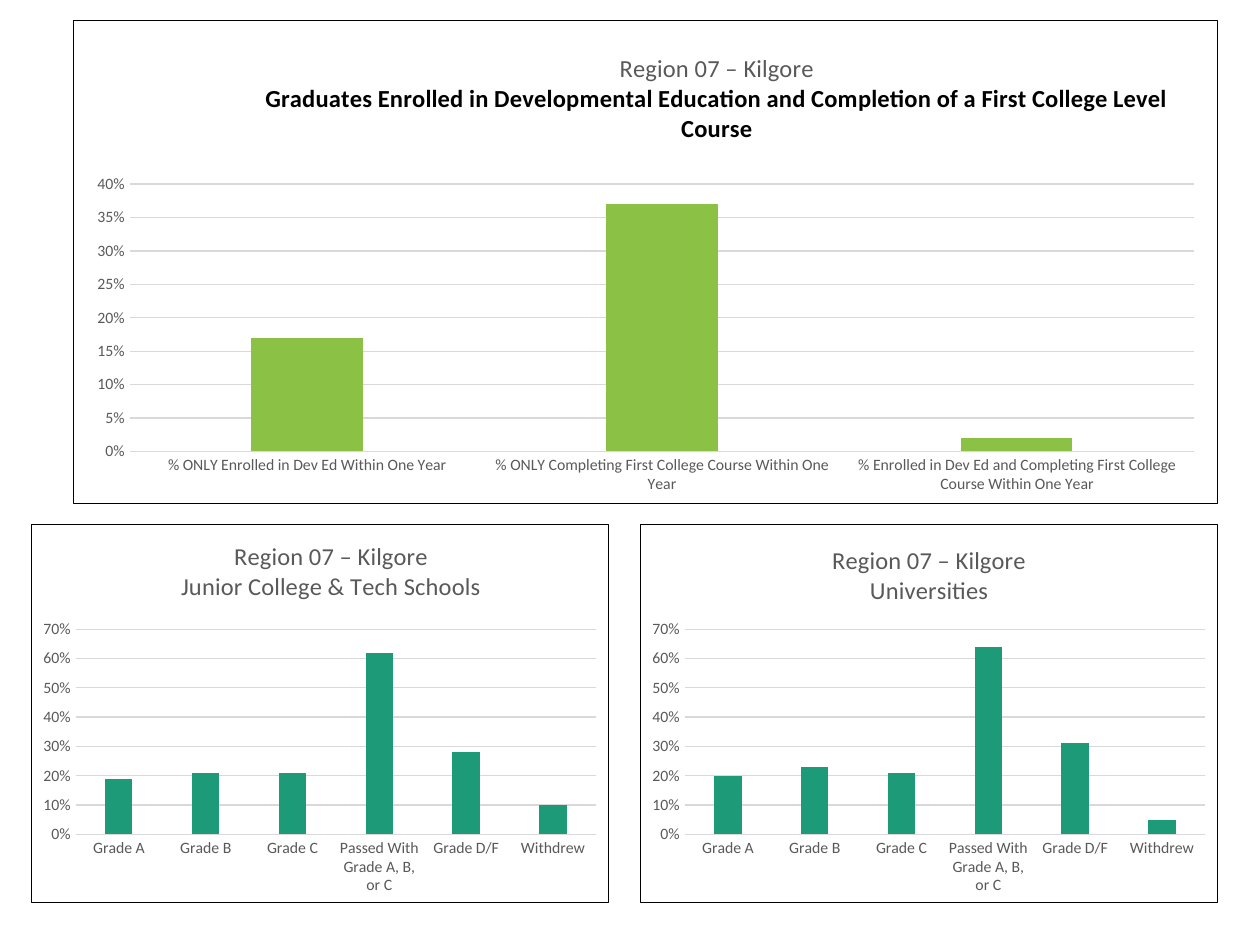
from lxml.etree import SubElement
from pptx import Presentation
from pptx.chart.data import CategoryChartData
from pptx.dml.color import RGBColor
from pptx.enum.chart import XL_CHART_TYPE, XL_TICK_MARK
from pptx.oxml import parse_xml
from pptx.oxml.ns import nsdecls, qn
from pptx.util import Pt

EMU_PER_PX = 914400 / 126
BLACK = RGBColor(0x00, 0x00, 0x00)
GRAY = RGBColor(0x59, 0x59, 0x59)
LIGHT_GRAY = RGBColor(0xD9, 0xD9, 0xD9)
LIME = RGBColor(0x8B, 0xC1, 0x45)
TEAL = RGBColor(0x1D, 0x9A, 0x78)
FONT = "Calibri"

REGION = "Region 07 – Kilgore"
OUTCOMES = [
    "% ONLY Enrolled in Dev Ed Within One Year",
    "% ONLY Completing First College Course Within One Year",
    "% Enrolled in Dev Ed and Completing First College Course Within One Year",
]
GRADES = ["Grade A", "Grade B", "Grade C", "Passed With Grade A, B, or C",
          "Grade D/F", "Withdrew"]


def px(n):
    return round(n * EMU_PER_PX)


def set_font(font, size, color, bold=False):
    font.name = FONT
    font.size = Pt(size)
    font.bold = bold
    font.color.rgb = color


def add_text(p, text, size=14, color=GRAY, bold=False):
    r = p.add_run()
    r.text = text
    set_font(r.font, size, color, bold)


def set_layout(parent, index, box, x, y, w=None, h=None):
    """Place a chart part, given in px from the corner of the chart's box."""
    old = parent.find(qn("c:layout"))
    if old is not None:
        parent.remove(old)
    layout = parse_xml(f"<c:layout {nsdecls('c')}/>")
    parent.insert(index, layout)
    manual = SubElement(layout, qn("c:manualLayout"))
    if w:
        SubElement(manual, qn("c:layoutTarget")).set("val", "inner")
    for key in ("x", "y"):
        SubElement(manual, qn(f"c:{key}Mode")).set("val", "edge")
    width, height = box[2:]
    for key, part, whole in (("x", x, width), ("y", y, height),
                             ("w", w, width), ("h", h, height)):
        if part is not None:
            SubElement(manual, qn(f"c:{key}")).set("val", str(part / whole))


def add_border(chart):
    sp_pr = parse_xml(
        f'<c:spPr {nsdecls("c", "a")}><a:solidFill><a:srgbClr val="FFFFFF"/></a:solidFill>'
        f'<a:ln w="{Pt(0.75)}"><a:solidFill><a:srgbClr val="{BLACK}"/></a:solidFill></a:ln>'
        '</c:spPr>')
    chart._chartSpace.find(qn("c:chart")).addnext(sp_pr)


def add_title(chart, box, subtitle, x, y, **fmt):
    chart.has_title = True
    title = chart.chart_title
    tf = title.text_frame
    add_text(tf.paragraphs[0], REGION)
    add_text(tf.add_paragraph(), subtitle, **fmt)
    title.include_in_layout = False
    set_layout(title._element, 1, box, x, y)


def style_axes(chart, top, step):
    cat, val = chart.category_axis, chart.value_axis
    for axis in (cat, val):
        axis.major_tick_mark = axis.minor_tick_mark = XL_TICK_MARK.NONE
        set_font(axis.tick_labels.font, 9, GRAY)
    val.minimum_scale, val.maximum_scale, val.major_unit = 0, top, step
    val.tick_labels.number_format = "0%"
    val.tick_labels.number_format_is_linked = False
    val.format.line.fill.background()
    val.has_major_gridlines = True
    for line in (cat.format.line, val.major_gridlines.format.line):
        line.color.rgb = LIGHT_GRAY
        line.width = Pt(0.75)


def add_column_chart(s, box, plot_box, cats, vals, color, top, step):
    data = CategoryChartData(number_format="0%")
    data.categories = cats
    data.add_series("Series 1", vals)
    chart = s.shapes.add_chart(
        XL_CHART_TYPE.COLUMN_CLUSTERED, *map(px, box), data).chart
    set_font(chart.font, 10, BLACK)
    chart.has_legend = False
    add_border(chart)
    style_axes(chart, top, step)

    # Columns
    plot = chart.plots[0]
    plot.gap_width, plot.overlap = 219, -27
    plot.vary_by_categories = False
    fill = plot.series[0].format.fill
    fill.solid()
    fill.fore_color.rgb = color

    # Plot area
    area = chart._chartSpace.find(qn("c:chart")).find(qn("c:plotArea"))
    set_layout(area, 0, box, *plot_box)
    return chart


def main():
    prs = Presentation()
    prs.slide_width, prs.slide_height = px(1260), px(945)
    s = prs.slides.add_slide(prs.slide_layouts[6])

    # Developmental education overview
    box = (73, 20, 1145, 484)
    chart = add_column_chart(s, box, (56, 164, 1066, 268), OUTCOMES,
                             [0.17, 0.37, 0.02], LIME, 0.4, 0.05)
    add_title(chart, box, "Graduates Enrolled in Developmental Education and Completion "
              "of a First College Level Course", 188, 27, color=BLACK, bold=True)

    # Grades by kind of institution
    schools = [
        (31, "Junior College & Tech Schools", [0.19, 0.21, 0.21, 0.62, 0.28, 0.1], 146, 11),
        (640, "Universities", [0.2, 0.23, 0.21, 0.64, 0.31, 0.05], 188, 15),
    ]
    for left, name, vals, x, y in schools:
        box = (left, 524, 578, 379)
        chart = add_column_chart(s, box, (44, 105, 522, 206), GRADES, vals, TEAL, 0.7, 0.1)
        add_title(chart, box, name, x, y)

    prs.save("out.pptx")


if __name__ == "__main__":
    main()
